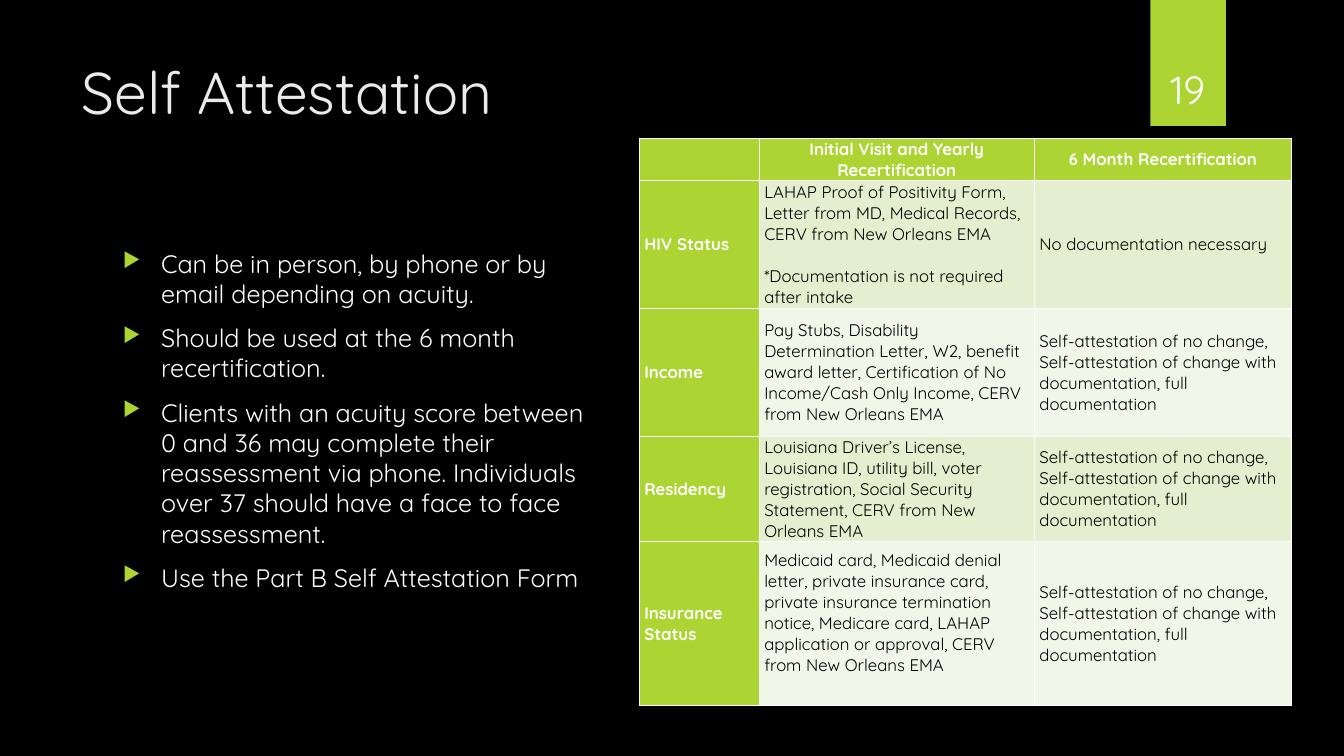
from dataclasses import dataclass
from lxml.etree import SubElement
from pptx import Presentation
from pptx.dml.color import RGBColor
from pptx.enum.shapes import MSO_SHAPE
from pptx.enum.text import MSO_ANCHOR as Anchor, PP_ALIGN as Align
from pptx.oxml.ns import qn
from pptx.util import Inches, Pt

TITLE = "Self Attestation"
PAGE = "19"
POINTS = [
    "Can be in person, by phone or by email depending on acuity.",
    "Should be used at the 6 month recertification.",
    "Clients with an acuity score between 0 and 36 may complete their reassessment via phone. "
    "Individuals over 37 should have a face to face reassessment.",
    "Use the Part B Self Attestation Form",
]
ATTEST = ("Self-attestation of no change, Self-attestation of change with documentation, "
          "full documentation")
REQUIREMENTS = [
    ("", "Initial Visit and Yearly Recertification", "6 Month Recertification"),
    ("HIV Status",
     "LAHAP Proof of Positivity Form, Letter from MD, Medical Records, CERV from New Orleans EMA\n"
     "*Documentation is not required after intake",
     "No documentation necessary"),
    ("Income",
     "Pay Stubs, Disability Determination Letter, W2, benefit award letter, "
     "Certification of No Income/Cash Only Income, CERV from New Orleans EMA", ATTEST),
    ("Residency",
     "Louisiana Driver’s License, Louisiana ID, utility bill, voter registration, "
     "Social Security Statement, CERV from New Orleans EMA", ATTEST),
    ("Insurance Status",
     "Medicaid card, Medicaid denial letter, private insurance card, private insurance "
     "termination notice, Medicare card, LAHAP application or approval, "
     "CERV from New Orleans EMA", ATTEST),
]


@dataclass(frozen=True)
class Theme:
    font: str = "Quicksand"
    back: str = "000000"
    accent: str = "ACD433"
    heading: str = "EBEBEB"
    light: str = "FFFFFF"
    dark: str = "000000"
    bands: tuple = ("F1F7E8", "E3EFCE")
    title_size: int = 42
    page_size: int = 28
    body_size: int = 18
    table_size: int = 12


theme = Theme()
GRID_COLS, GRID_ROWS = 1333, 750
TITLE_AREA = (71, 50, 1029, 153)
POINTS_AREA = (112, 241, 487, 409)
TAB_AREA = (1141, 0, 75, 125)
PAGE_AREA = (1132, 32, 92, 84)
TABLE_CORNER = (634, 137)
TABLE_COLS = (119, 273, 255)
TABLE_ROWS = (42, 127, 127, 104, 163)
LINE_GAP = Pt(15)

deck = Presentation()
deck.slide_width, deck.slide_height = Inches(13.33), Inches(7.5)
slide = deck.slides.add_slide(deck.slide_layouts[6])
slide.background.fill.solid()
slide.background.fill.fore_color.rgb = RGBColor.from_string(theme.back)


def across(cols):
    return round(deck.slide_width * cols / GRID_COLS)


def down(rows):
    return round(deck.slide_height * rows / GRID_ROWS)


def place(area):
    left, top, width, height = area
    return across(left), down(top), across(width), down(height)


def style(paragraph, size, color, bold=False, align=Align.LEFT):
    paragraph.alignment = align
    font = paragraph.font
    font.name, font.size, font.bold = theme.font, Pt(size), bold
    font.color.rgb = RGBColor.from_string(color)


def add_text(area, lines, size, color, anchor=Anchor.TOP, align=Align.LEFT, prepare=None):
    frame = slide.shapes.add_textbox(*place(area)).text_frame
    frame.word_wrap = True
    frame.vertical_anchor = anchor
    frame.text = "\n".join(lines)
    for index, paragraph in enumerate(frame.paragraphs):
        if prepare:
            prepare(paragraph, index)
        style(paragraph, size, color, align=align)


def add_bullet(paragraph, index):
    if index:
        paragraph.space_before = Pt(10)
    props = paragraph._p.get_or_add_pPr()
    props.set("marL", str(Inches(0.38)))
    props.set("indent", str(-Inches(0.38)))
    SubElement(SubElement(props, qn("a:buClr")), qn("a:srgbClr"), val=theme.accent)
    SubElement(props, qn("a:buSzPct"), val="80000")
    SubElement(props, qn("a:buChar"), char="▶")


def add_borders(cell):
    props = cell._tc.get_or_add_tcPr()
    for side in "LRTB":
        line = SubElement(props, qn(f"a:ln{side}"), w=str(Pt(1)))
        SubElement(SubElement(line, qn("a:solidFill")), qn("a:srgbClr"), val=theme.light)


def fill_cell(cell, text, row, col):
    is_label = row == 0 or col == 0
    add_borders(cell)
    cell.fill.solid()
    cell.fill.fore_color.rgb = RGBColor.from_string(
        theme.accent if is_label else theme.bands[row % 2])
    cell.vertical_anchor = Anchor.MIDDLE
    cell.margin_left = cell.margin_right = Inches(0.05)
    cell.margin_top = cell.margin_bottom = 0
    cell.text = text
    for index, paragraph in enumerate(cell.text_frame.paragraphs):
        if index:
            paragraph.space_before = LINE_GAP
        style(paragraph, theme.table_size, theme.light if is_label else theme.dark,
              is_label, Align.LEFT if row else Align.CENTER)


tab = slide.shapes.add_shape(MSO_SHAPE.RECTANGLE, *place(TAB_AREA))
tab.shadow.inherit = False
tab.fill.solid()
tab.fill.fore_color.rgb = RGBColor.from_string(theme.accent)
tab.line.fill.background()

add_text(TITLE_AREA, [TITLE], theme.title_size, theme.heading)
add_text(POINTS_AREA, POINTS, theme.body_size, theme.light, prepare=add_bullet)

table_area = (*TABLE_CORNER, sum(TABLE_COLS), sum(TABLE_ROWS))
table = slide.shapes.add_table(len(TABLE_ROWS), len(TABLE_COLS), *place(table_area)).table
for column, width in zip(table.columns, TABLE_COLS):
    column.width = across(width)
for table_row, height in zip(table.rows, TABLE_ROWS):
    table_row.height = down(height)
for row, entries in enumerate(REQUIREMENTS):
    for col, entry in enumerate(entries):
        fill_cell(table.cell(row, col), entry, row, col)
table.cell(4, 1).margin_bottom = LINE_GAP

add_text(PAGE_AREA, [PAGE], theme.page_size, theme.light, Anchor.BOTTOM, Align.CENTER)

deck.save("out.pptx")
